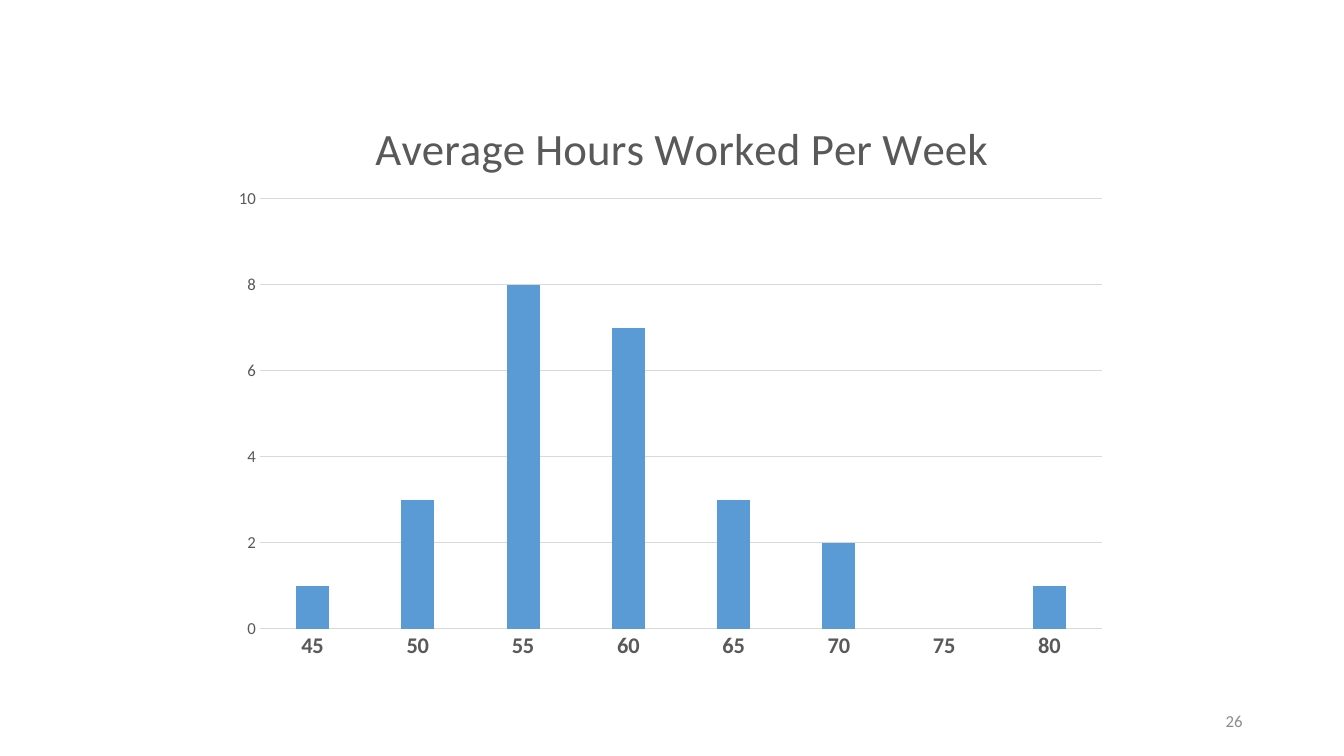
from lxml.etree import SubElement
from pptx import Presentation
from pptx.chart.data import CategoryChartData as ChartData
from pptx.dml.color import RGBColor
from pptx.enum.chart import XL_CHART_TYPE as Kind, XL_TICK_MARK as Tick
from pptx.enum.text import MSO_ANCHOR as Anchor, PP_ALIGN as Align
from pptx.oxml import parse_xml
from pptx.oxml.ns import nsdecls, qn
from pptx.util import Inches, Pt

BLUE = RGBColor(0x5B, 0x9B, 0xD5)
DARK = RGBColor(0x59, 0x59, 0x59)
GREY = RGBColor(0x8C, 0x8C, 0x8C)
PALE = RGBColor(0xD9, 0xD9, 0xD9)

WIDE, HIGH = Inches(13.33), Inches(7.5)
HOURS = ["45", "50", "55", "60", "65", "70", "75", "80"]
COUNTS = [1, 3, 8, 7, 3, 2, None, 1]


def place(node, index, **values):
    """Set a manual chart layout, in shares of the chart's size."""
    layout = node.find(qn("c:layout"))
    if layout is None:
        layout = parse_xml(f"<c:layout {nsdecls('c')}/>")
        node.insert(index, layout)
    manual = SubElement(layout, qn("c:manualLayout"))
    for name, value in values.items():
        SubElement(manual, qn(f"c:{name}")).set("val", str(value))


class Page:
    """Holds the style and the slide; places are shares of the slide's size."""

    def __init__(self, slide, face="Calibri"):
        self.slide = slide
        self.face = face

    def box(self, left, top, width, height):
        return (round(left * WIDE), round(top * HIGH),
                round(width * WIDE), round(height * HIGH))

    def style(self, font, size, color=DARK, bold=False):
        font.name = self.face
        font.size = Pt(size)
        font.bold = bold
        font.color.rgb = color

    def rule(self, line):
        line.color.rgb = PALE
        line.width = Pt(0.75)

    def text(self, words, area, align=Align.LEFT, **look):
        frame = self.slide.shapes.add_textbox(*self.box(*area)).text_frame
        frame.word_wrap = True
        frame.vertical_anchor = Anchor.MIDDLE
        para = frame.paragraphs[0]
        para.alignment = align
        run = para.add_run()
        run.text = words
        self.style(run.font, **look)

    def chart(self, title, cats, values, area):
        data = ChartData()
        data.categories = cats
        data.add_series("Series 1", values)
        chart = self.slide.shapes.add_chart(
            Kind.COLUMN_CLUSTERED, *self.box(*area), data).chart
        chart.has_legend = False
        self.style(chart.font, 10)
        self.head(chart, title)
        self.axes(chart)
        plot = chart.plots[0]
        plot.gap_width = 219
        plot.overlap = -27
        plot.vary_by_categories = False
        fill = plot.series[0].format.fill
        fill.solid()
        fill.fore_color.rgb = BLUE
        place(chart.element.find(".//" + qn("c:plotArea")), 0,
              layoutTarget="inner", xMode="edge", yMode="edge",
              x=0.04, y=0.2, w=0.94, h=0.72)

    def head(self, chart, title):
        chart.has_title = True
        para = chart.chart_title.text_frame.paragraphs[0]
        run = para.add_run()
        run.text = title
        self.style(run.font, 32)
        place(chart.element.find(".//" + qn("c:title")), 1,
              xMode="edge", yMode="edge", x=0.16, y=0.05)

    def axes(self, chart):
        base, scale = chart.category_axis, chart.value_axis
        for axis in (base, scale):
            axis.major_tick_mark = axis.minor_tick_mark = Tick.NONE
        self.style(base.tick_labels.font, 16, bold=True)
        self.rule(base.format.line)
        self.style(scale.tick_labels.font, 12)
        scale.format.line.fill.background()
        scale.minimum_scale, scale.maximum_scale = 0, 10
        scale.major_unit = 2
        self.rule(scale.major_gridlines.format.line)


def main():
    deck = Presentation()
    deck.slide_width, deck.slide_height = WIDE, HIGH
    page = Page(deck.slides.add_slide(deck.slide_layouts[6]))
    page.chart("Average Hours Worked Per Week", HOURS, COUNTS,
               (1 / 6, 0.105, 2 / 3, 0.79))
    page.text("26", (0.707, 0.927, 0.225, 0.053), Align.RIGHT,
              size=12, color=GREY)
    deck.save("out.pptx")


if __name__ == "__main__":
    main()
